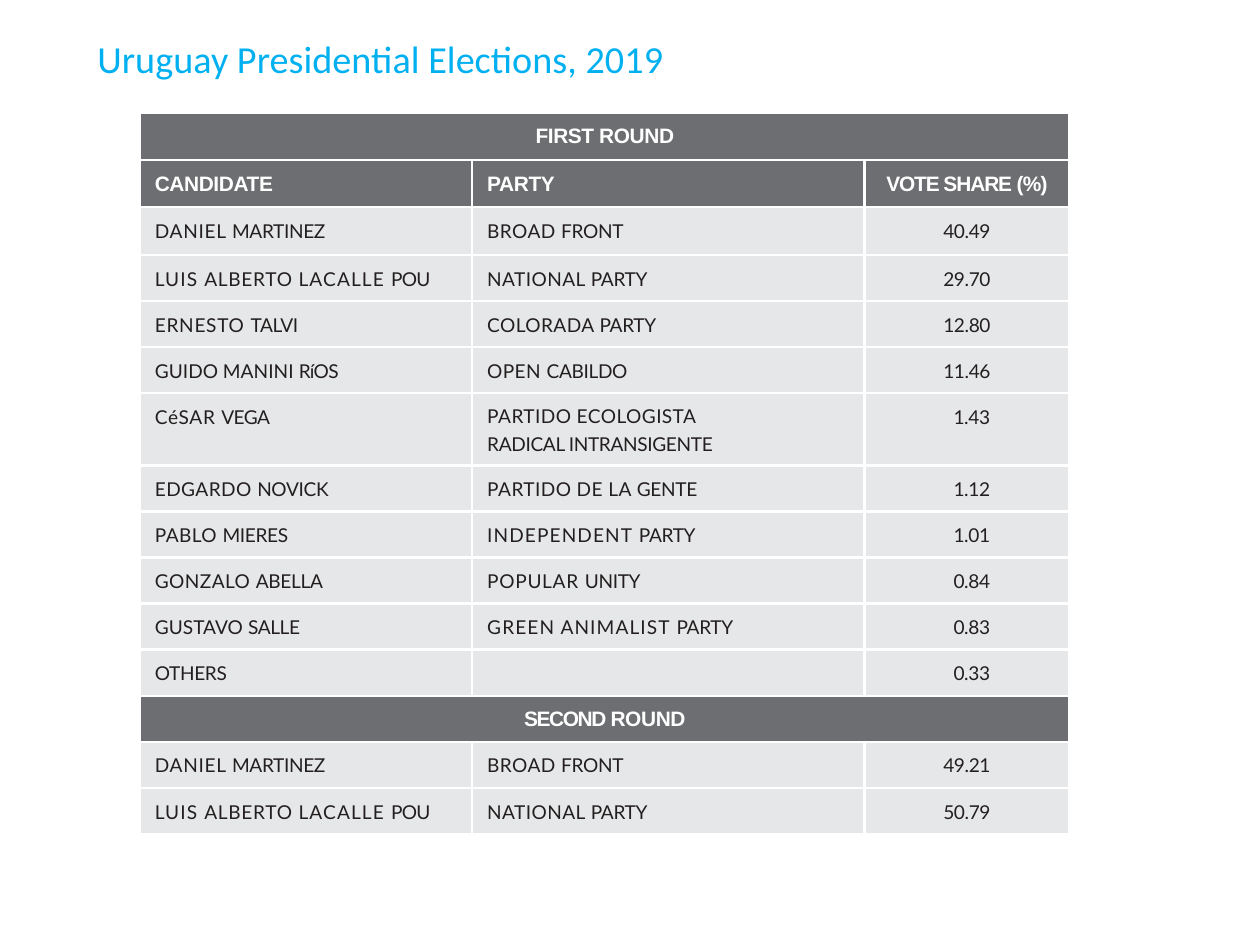
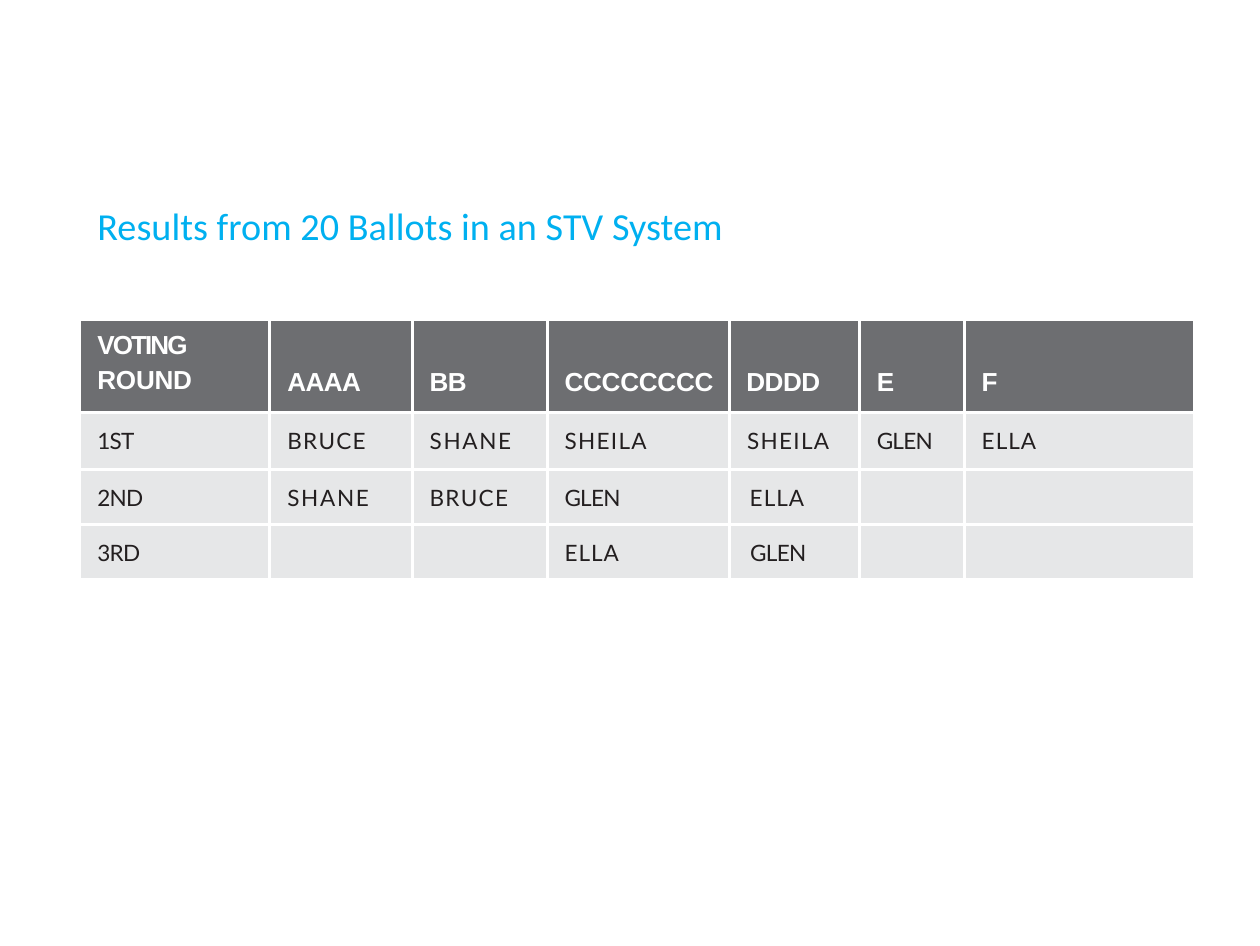
from dataclasses import dataclass

from lxml.etree import SubElement
from pptx import Presentation
from pptx.dml.color import RGBColor
from pptx.enum.text import PP_ALIGN
from pptx.oxml.ns import qn
from pptx.slide import Slide
from pptx.table import _Cell
from pptx.text.text import TextFrame
from pptx.util import Inches, Pt

BLUE = "00B0F0"
DARK = "6D6E71"
LIGHT = "E6E7E8"
WHITE = "FFFFFF"
INK = "231F20"

TRACKING = {
    "DANIEL": 0.2, "BROAD": 0.1, "LUIS": 0.3, "ALBERTO": 0.2, "LACALLE": 0.3,
    "POU": -0.2, "NATIONAL": 0.1, "ERNESTO": 0.2, "COLORADA": 0.1,
    "GUIDO": 0, "MANINI": 0, "RíOS": -0.2, "OPEN": 0.1, "CéSAR": 0.2,
    "VEGA": -0.2, "PARTIDO": 0.1, "ECOLOGISTA": 0.1, "EDGARDO": 0.1,
    "DE": 0.1, "LA": 0.1, "PABLO": 0.1, "INDEPENDENT": 0.3, "GONZALO": 0.1,
    "POPULAR": 0.2, "GUSTAVO": 0, "GREEN": 0.3, "ANIMALIST": 0.3,
    "VOTE": -0.3, "SHARE": -0.3, "(%)": -0.2, "SECOND": -0.4, "VOTING": -0.6,
    "BRUCE": 0.4, "SHANE": 0.5, "SHEILA": 0.4, "ELLA": 0.3, "GLEN": -0.2,
    "1ST": -0.2, "2ND": -0.2, "3RD": -0.2, "AAAA": -0.2, "BB": -0.2,
    "DDDD": -0.2, "E": -0.5, "F": -0.5,
}

WRAP_MARGINS = {
    "VOTING ROUND": 0.1,
    "PARTIDO ECOLOGISTA RADICAL INTRANSIGENTE": 0.42,
}

ELECTION_ROWS = [
    ("FIRST ROUND",),
    ("CANDIDATE", "PARTY", "VOTE SHARE (%)"),
    ("DANIEL MARTINEZ", "BROAD FRONT", "40.49"),
    ("LUIS ALBERTO LACALLE POU", "NATIONAL PARTY", "29.70"),
    ("ERNESTO TALVI", "COLORADA PARTY", "12.80"),
    ("GUIDO MANINI RíOS", "OPEN CABILDO", "11.46"),
    ("CéSAR VEGA", "PARTIDO ECOLOGISTA RADICAL INTRANSIGENTE", "1.43"),
    ("EDGARDO NOVICK", "PARTIDO DE LA GENTE", "1.12"),
    ("PABLO MIERES", "INDEPENDENT PARTY", "1.01"),
    ("GONZALO ABELLA", "POPULAR UNITY", "0.84"),
    ("GUSTAVO SALLE", "GREEN ANIMALIST PARTY", "0.83"),
    ("OTHERS", "", "0.33"),
    ("SECOND ROUND",),
    ("DANIEL MARTINEZ", "BROAD FRONT", "49.21"),
    ("LUIS ALBERTO LACALLE POU", "NATIONAL PARTY", "50.79"),
]

BALLOT_ROWS = [
    ("VOTING ROUND", "AAAA", "BB", "CCCCCCCC", "DDDD", "E", "F"),
    ("1ST", "BRUCE", "SHANE", "SHEILA", "SHEILA", "GLEN", "ELLA"),
    ("2ND", "SHANE", "BRUCE", "GLEN", "ELLA", "", ""),
    ("3RD", "", "", "ELLA", "GLEN", "", ""),
]


@dataclass(frozen=True)
class Grid:
    left: float
    top: float
    widths: list[float]
    heights: list[float]
    rows: list[tuple[str, ...]]
    header_rows: set[int]
    centred_column: int
    centred_insets: list[float]
    header_size: float
    body_size: float
    indent: float
    header_top: float
    body_top: float
    wrapped_top: float
    border: float


def rgb(color: str) -> RGBColor:
    return RGBColor.from_string(color)


def write(tf: TextFrame, text: str, *, size: float, font: str, color: str,
          bold: bool = False, align: PP_ALIGN = PP_ALIGN.LEFT,
          tracked: bool = False, line_spacing: float | None = None) -> None:
    p = tf.paragraphs[0]
    p.alignment = align
    p.line_spacing = line_spacing
    words = text.split() if tracked else [text]
    if not text:
        end = SubElement(p._p, qn("a:endParaRPr"))
        end.set("sz", str(round(size * 100)))
        return
    for n, word in enumerate(words, 1):
        r = p.add_run()
        r.text = word if n == len(words) else word + " "
        r.font.size = Pt(size)
        r.font.name = font
        r.font.bold = bold
        r.font.color.rgb = rgb(color)
        if tracked:
            spacing = TRACKING.get(word, -0.1)
            r._r.get_or_add_rPr().set("spc", str(round(spacing * 100)))


def set_borders(cell: _Cell, width: float) -> None:
    tc_pr = cell._tc.get_or_add_tcPr()
    for i, side in enumerate(("lnL", "lnR", "lnT", "lnB")):
        ln = tc_pr.makeelement(qn(f"a:{side}"), {"w": str(int(Pt(width)))})
        fill = SubElement(ln, qn("a:solidFill"))
        SubElement(fill, qn("a:srgbClr"), val=WHITE)
        tc_pr.insert(i, ln)


def add_title(s: Slide, text: str, top: float, width: float) -> None:
    sp = s.shapes.add_textbox(Inches(0.38), Inches(top), Inches(width), Inches(0.2))
    tf = sp.text_frame
    tf.word_wrap = True
    tf.margin_left = tf.margin_top = Inches(0.01)
    tf.margin_right = tf.margin_bottom = 0
    write(tf, text, size=11, font="Calibri", color=BLUE)


def fill_cell(cell: _Cell, text: str, grid: Grid, header: bool,
              centred: bool, inset: float) -> None:
    cell.fill.solid()
    cell.fill.fore_color.rgb = rgb(DARK if header else LIGHT)
    set_borders(cell, grid.border)
    wrapped = text in WRAP_MARGINS
    top = grid.header_top if header else grid.body_top
    short_number = text.startswith(("0.", "1."))
    cell.margin_top = Inches(grid.wrapped_top if wrapped else top)
    cell.margin_left = Inches((0.04 if short_number else 0) if centred else grid.indent)
    cell.margin_right = Inches(WRAP_MARGINS.get(text, inset if centred else 0))
    cell.margin_bottom = 0
    write(
        cell.text_frame, text,
        size=grid.header_size if header else grid.body_size,
        font="Arial" if header else "Lato",
        color=WHITE if header else INK,
        bold=header,
        align=PP_ALIGN.CENTER if centred else PP_ALIGN.LEFT,
        tracked=True,
        line_spacing=1.2 if wrapped else None,
    )


def add_grid(s: Slide, grid: Grid) -> None:
    count = len(grid.widths)
    table = s.shapes.add_table(
        len(grid.rows), count, Inches(grid.left), Inches(grid.top),
        Inches(sum(grid.widths)), Inches(sum(grid.heights)),
    ).table
    table.first_row = table.horz_banding = False
    for column, width in zip(table.columns, grid.widths):
        column.width = Inches(width)
    for i, (texts, height) in enumerate(zip(grid.rows, grid.heights)):
        table.rows[i].height = Inches(height)
        band = len(texts) == 1
        if band:
            table.cell(i, 0).merge(table.cell(i, count - 1))
        for j in range(count):
            text = texts[j] if j < len(texts) else ""
            fill_cell(table.cell(i, j), text, grid, i in grid.header_rows,
                      band or j == grid.centred_column, grid.centred_insets[i])


def election_heights() -> list[float]:
    total, header, tall = 2.89, 0.19, 0.29
    plain = (total - 3 * header - tall) / 11
    return [header] * 3 + [plain] * 3 + [tall] + [plain] * 8


def main() -> None:
    prs = Presentation()
    prs.slide_width = Pt(363)
    prs.slide_height = Pt(272.5)
    blank = prs.slide_layouts[6]

    s = prs.slides.add_slide(blank)
    add_title(s, "Uruguay Presidential Elections, 2019", 0.13, 2.35)
    add_grid(s, Grid(
        left=0.56, top=0.45, widths=[1.33, 1.57, 0.82], heights=election_heights(),
        rows=ELECTION_ROWS, header_rows={0, 1, 12}, centred_column=2,
        centred_insets=[0] * len(ELECTION_ROWS),
        header_size=6, body_size=5.5, indent=0.06,
        header_top=0.05, body_top=0.05, wrapped_top=0.03, border=0.75,
    ))

    s = prs.slides.add_slide(blank)
    add_title(s, "Results from 20 Ballots in an STV System", 0.8, 2.72)
    add_grid(s, Grid(
        left=0.32, top=1.28, widths=[0.76, 0.57, 0.54, 0.73, 0.52, 0.42, 0.92],
        heights=[0.37, 0.23, 0.22, 0.22],
        rows=BALLOT_ROWS, header_rows={0}, centred_column=4,
        centred_insets=[0.09, 0.05, 0.14, 0.13],
        header_size=7.5, body_size=6.5, indent=0.07,
        header_top=0.19, body_top=0.06, wrapped_top=0.02, border=1,
    ))

    prs.save("out.pptx")


if __name__ == "__main__":
    main()
